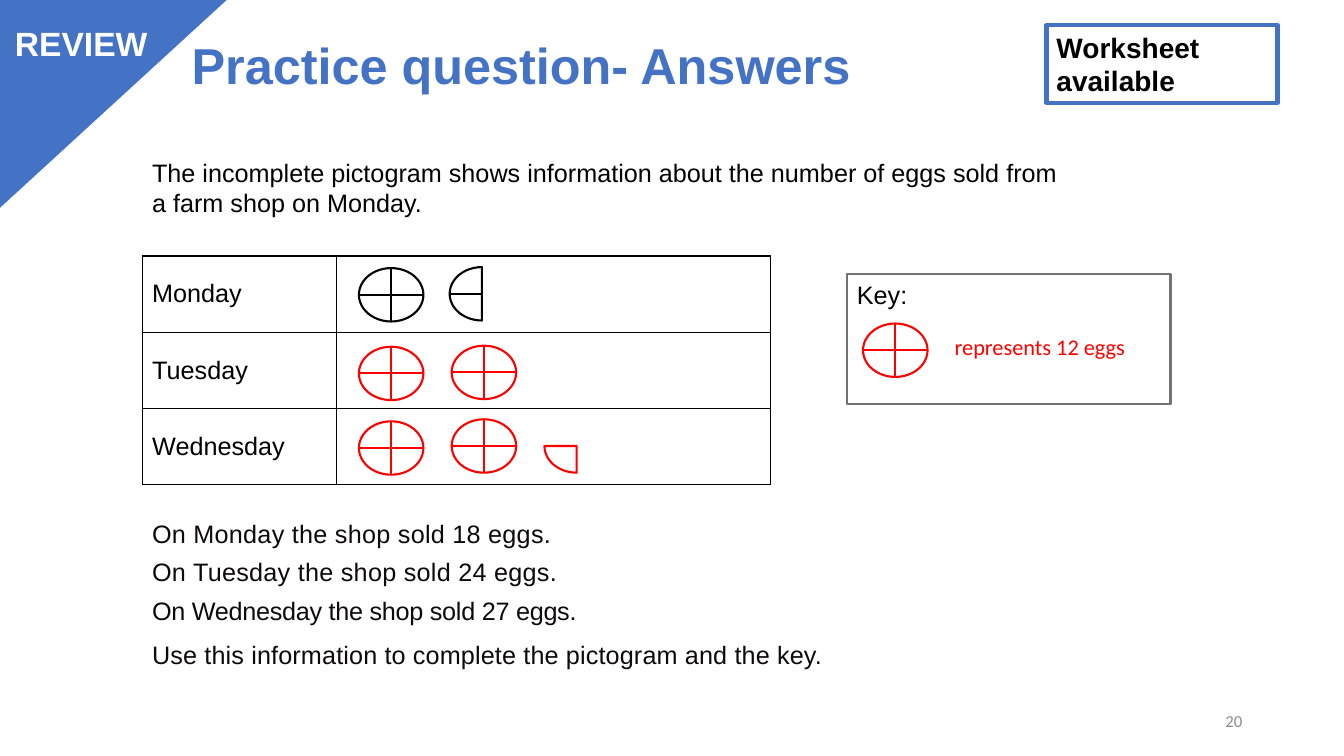
from lxml import etree
from pptx import Presentation
from pptx.dml.color import RGBColor
from pptx.enum.shapes import MSO_CONNECTOR, MSO_SHAPE
from pptx.enum.text import MSO_ANCHOR, PP_ALIGN
from pptx.oxml.ns import qn
from pptx.util import Inches, Pt

COLORS = {
    "blue": "4472C4",
    "white": "FFFFFF",
    "black": "000000",
    "ink": "0C0A0A",
    "red": "FF0000",
    "gray": "767171",
    "number": "8C8C8C",
}
SYMBOL_SIZE = (0.64, 0.53)
PIE_ANGLES = {"half": (54, 162), "quarter": (54, 108)}


def color(name):
    """Return the named palette colour."""
    return RGBColor.from_string(COLORS[name])


def inches(*values):
    """Convert numbers to lengths in inches."""
    return [Inches(value) for value in values]


def format_paragraph(paragraph, size, ink, bold=False, font="Arial", spacing=0):
    """Format every run of a paragraph; spacing is in points."""
    for run in paragraph.runs:
        run.font.name = font
        run.font.size = Pt(size)
        run.font.bold = bold
        run.font.color.rgb = color(ink)
        if spacing:
            run.font._element.set("spc", str(round(spacing * 100)))


def write(shape, text, size, ink, align=PP_ALIGN.LEFT, anchor=MSO_ANCHOR.TOP, **style):
    """Fill a shape with one formatted paragraph."""
    frame = shape.text_frame
    frame.word_wrap = True
    frame.vertical_anchor = anchor
    paragraph = frame.paragraphs[0]
    paragraph.text = text
    paragraph.alignment = align
    format_paragraph(paragraph, size, ink, **style)


def add_text(slide, box, *content, **style):
    """Add a text box holding one paragraph."""
    write(slide.shapes.add_textbox(*inches(*box)), *content, **style)


def add_outlined(shapes, preset, box, line, width, fill=None):
    """Add a preset shape with an outline and an optional fill."""
    shape = shapes.add_shape(preset, *inches(*box))
    shape.shadow.inherit = False
    if fill:
        shape.fill.solid()
        shape.fill.fore_color.rgb = color(fill)
    else:
        shape.fill.background()
    shape.line.color.rgb = color(line)
    shape.line.width = Pt(width)
    return shape


def add_line(shapes, ends, ink):
    """Add a straight line without a shadow."""
    line = shapes.add_connector(MSO_CONNECTOR.STRAIGHT, *inches(*ends))
    line.line.color.rgb = color(ink)
    line.line.width = Pt(1.5)
    etree.SubElement(line.element.spPr, qn("a:effectLst"))


def add_symbol(slide, left, top, ink, part="whole"):
    """Draw a whole, half or quarter egg symbol in its full-size box."""
    width, height = SYMBOL_SIZE
    box = (left, top, width, height)
    middle_x, middle_y = left + width / 2, top + height / 2
    if part == "quarter":
        shapes = slide.shapes
    else:
        shapes = slide.shapes.add_group_shape().shapes
    if part == "whole":
        add_outlined(shapes, MSO_SHAPE.OVAL, box, ink, 1.5, "white")
        add_line(shapes, (middle_x, top, middle_x, top + height), ink)
        add_line(shapes, (left, middle_y, left + width, middle_y), ink)
        return
    pie = add_outlined(shapes, MSO_SHAPE.PIE, box, ink, 1.5, "white")
    for index, angle in enumerate(PIE_ANGLES[part]):
        pie.adjustments[index] = angle
    if part == "half":
        add_line(shapes, (left, middle_y, middle_x, middle_y), ink)


def add_header(slide, left, top):
    """Place the review corner, the title and the worksheet note."""
    title = slide.shapes.title
    title.left, title.top, title.width, title.height = inches(left + 1.8, top + 0.12, 8.69, 1.11)
    write(title, "Practice question- Answers", 36, "blue", anchor=MSO_ANCHOR.MIDDLE, bold=True)
    title.text_frame.paragraphs[0].line_spacing = 0.9

    corner_box = (left - 0.03, top - 0.02, 2.29, 2.1)
    corner = add_outlined(slide.shapes, MSO_SHAPE.ISOSCELES_TRIANGLE, corner_box, "blue", 1, "blue")
    corner.adjustments[0] = 0
    corner.element.spPr.xfrm.set("flipV", "1")
    add_text(slide, (left - 0.02, top + 0.18, 1.65, 0.5), "REVIEW", 24, "white",
             align=PP_ALIGN.CENTER, bold=True)

    note_box = (left + 10.38, top + 0.25, 2.29, 0.77)
    note = add_outlined(slide.shapes, MSO_SHAPE.RECTANGLE, note_box, "blue", 3)
    write(note, "Worksheet\vavailable", 20, "black", bold=True)


def add_question(slide, left, top, width):
    """Place the introduction, the sales facts and the task."""
    add_text(slide, (left, top, width, 0.71),
             "The incomplete pictogram shows information about the number of eggs sold "
             "from a farm shop on Monday.", 18, "black")

    facts = [
        ("On Monday the shop sold 18 eggs.", 0.2),
        ("On Tuesday the shop sold 24 eggs.", 0.2),
        ("On Wednesday the shop sold 27 eggs.", -0.2),
    ]
    frame = slide.shapes.add_textbox(*inches(left, top + 3.58, width, 1.18)).text_frame
    frame.word_wrap = True
    for index, (fact, spacing) in enumerate(facts):
        paragraph = frame.add_paragraph() if index else frame.paragraphs[0]
        paragraph.text = fact
        paragraph.alignment = PP_ALIGN.JUSTIFY
        if index:
            paragraph.space_before = Pt(6)
        format_paragraph(paragraph, 18, "ink", spacing=spacing)

    add_text(slide, (left, top + 4.78, width, 0.4),
             "Use this information to complete the pictogram and the key.", 18, "ink", spacing=0.1)


def format_cell(cell):
    """Give a table cell a white fill and thin black borders."""
    cell.fill.solid()
    cell.fill.fore_color.rgb = color("white")
    properties = cell._tc.get_or_add_tcPr()
    for index, side in enumerate(("a:lnL", "a:lnR", "a:lnT", "a:lnB")):
        border = etree.Element(qn(side), w=str(Pt(1)))
        fill = etree.SubElement(border, qn("a:solidFill"))
        etree.SubElement(fill, qn("a:srgbClr"), val=COLORS["black"])
        properties.insert(index, border)


def add_pictogram(slide, left, top):
    """Place the table of days and draw the egg symbols over it."""
    days = ["Monday", "Tuesday", "Wednesday"]
    column_widths = inches(1.93, 4.3)
    table = slide.shapes.add_table(len(days), 2, *inches(left, top, 6.23, 2.27)).table
    table.first_row = table.horz_banding = False
    for column, width in zip(table.columns, column_widths):
        column.width = width
    for row, day in zip(table.rows, days):
        row.height = Inches(0.757)
        for cell in row.cells:
            format_cell(cell)
        label = row.cells[0]
        label.vertical_anchor = MSO_ANCHOR.MIDDLE
        label.text_frame.text = day
        format_paragraph(label.text_frame.paragraphs[0], 18, "black")

    symbols = [
        (2.15, 0.12, "black", "whole"), (3.05, 0.11, "black", "half"),
        (2.15, 0.9, "red", "whole"), (3.07, 0.89, "red", "whole"),
        (2.15, 1.64, "red", "whole"), (3.07, 1.62, "red", "whole"),
        (3.99, 1.62, "red", "quarter"),
    ]
    for x, y, ink, part in symbols:
        add_symbol(slide, left + x, top + y, ink, part)


def add_key(slide, left, top):
    """Place the key box with its symbol and meaning."""
    key = add_outlined(slide.shapes, MSO_SHAPE.RECTANGLE, (left, top, 3.21, 1.29), "gray", 1.5, "white")
    write(key, "Key:", 18, "black")
    add_symbol(slide, left + 0.16, top + 0.49, "red")
    add_text(slide, (left + 0.97, top + 0.54, 1.99, 0.37), "represents 12 eggs", 16, "red", font="Calibri")


def main():
    """Build and save the slide."""
    presentation = Presentation()
    presentation.slide_width, presentation.slide_height = inches(13.33, 7.5)
    slide = presentation.slides.add_slide(presentation.slide_layouts[5])
    add_header(slide, 0, 0)
    add_question(slide, 1.41, 1.51, 9.35)
    add_key(slide, 8.4, 2.72)
    add_pictogram(slide, 1.41, 2.54)
    add_text(slide, (9.42, 6.95, 3, 0.4), "20", 12, "number",
             align=PP_ALIGN.RIGHT, anchor=MSO_ANCHOR.MIDDLE, font="Calibri")
    presentation.save("out.pptx")


if __name__ == "__main__":
    main()
